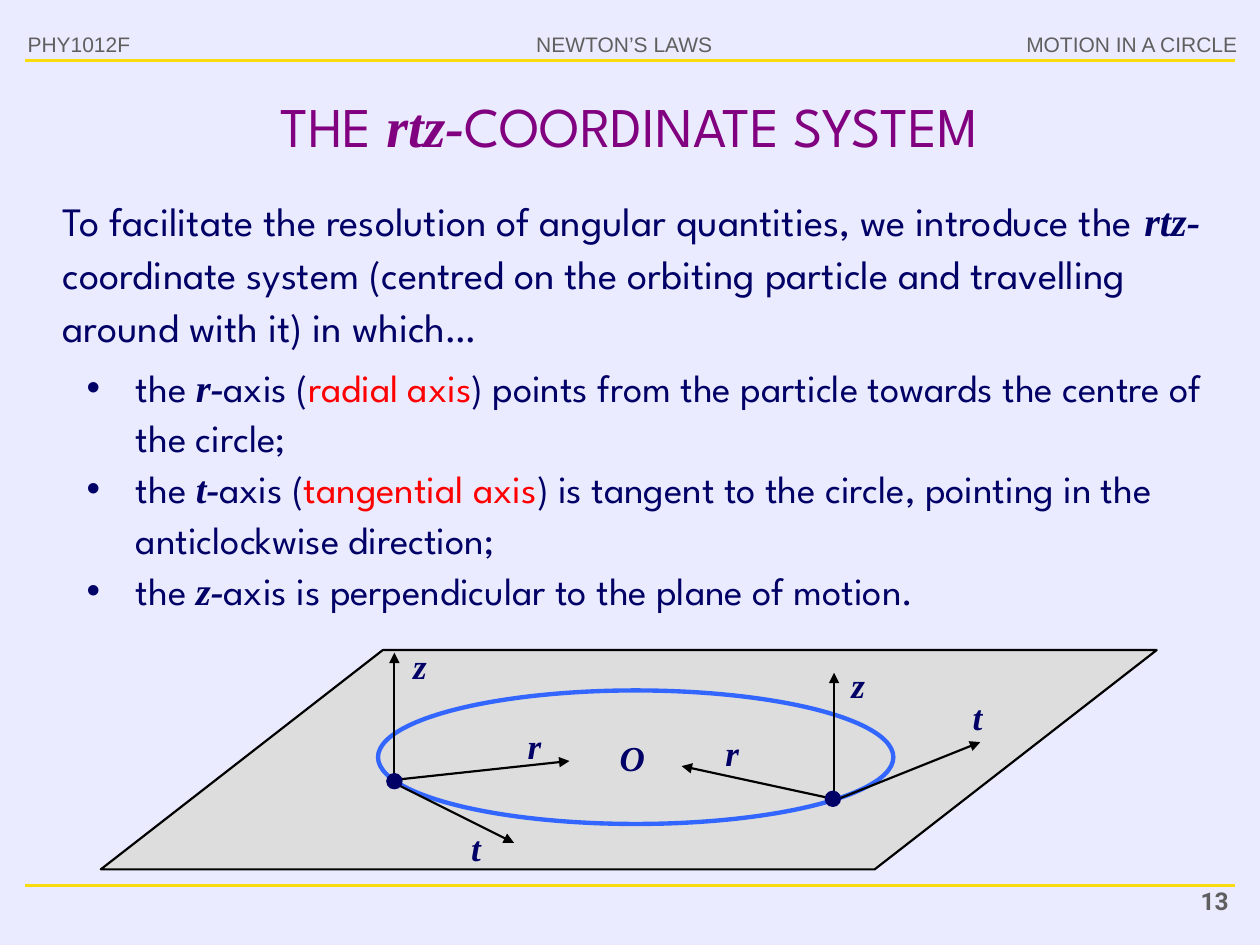
from dataclasses import dataclass
from typing import NamedTuple

from lxml import etree
from pptx import Presentation
from pptx import util as u
from pptx.dml.color import RGBColor
from pptx.enum import shapes, text
from pptx.oxml.ns import qn

COLORS = {
    "background": "EBEBFF", "rule": "F8DC0E", "header": "5F5F5F",
    "title": "800080", "body": "000066", "accent": "FF0000",
    "plane": "DDDDDD", "orbit": "3366FF", "ink": "000000",
}
HEADER_FONT, BODY_FONT, SYMBOL_FONT = "Arial", "League Spartan", "Times New Roman"
LEFT, CENTER, RIGHT = text.PP_ALIGN.LEFT, text.PP_ALIGN.CENTER, text.PP_ALIGN.RIGHT

# Grid of 100 columns by 75 rows
presentation = Presentation()
presentation.slide_width, presentation.slide_height = u.Inches(10), u.Inches(7.5)
COLUMN = presentation.slide_width / 100
ROW = presentation.slide_height / 75


class Box(NamedTuple):
    column: float
    row: float
    columns: float
    rows: float

    def lengths(self) -> tuple:
        return (u.Emu(round(self.column * COLUMN)), u.Emu(round(self.row * ROW)),
                u.Emu(round(self.columns * COLUMN)), u.Emu(round(self.rows * ROW)))


class Point(NamedTuple):
    column: float
    row: float


class Piece(NamedTuple):
    words: str
    kind: str = "plain"  # plain, symbol or accent


@dataclass
class Style:
    size: float
    color: str
    font: str = BODY_FONT
    bold: bool = False
    align: text.PP_ALIGN = LEFT
    spacing: float = 1.0
    margin: float = 0
    hanging: float = 0
    bullet: str = ""
    anchor: text.MSO_ANCHOR = text.MSO_ANCHOR.TOP
    wrap: bool = True


@dataclass
class Axis:
    name: str
    start: Point
    end: Point
    label: Box


@dataclass
class Particle:
    center: Point
    axes: list[Axis]


def rgb(name: str) -> RGBColor:
    return RGBColor.from_string(COLORS[name])


def format_paragraph(paragraph, style: Style) -> None:
    properties = paragraph._p.get_or_add_pPr()
    properties.set("marL", str(round(style.margin * COLUMN)))
    properties.set("indent", str(round(-style.hanging * COLUMN)))
    if style.bullet:
        etree.SubElement(properties, qn("a:buFont"), typeface=HEADER_FONT)
        etree.SubElement(properties, qn("a:buChar"), char=style.bullet)
    paragraph.alignment = style.align
    paragraph.line_spacing = style.spacing


def add_text(slide, box: Box, paragraphs: list[list[Piece]], style: Style) -> None:
    frame = slide.shapes.add_textbox(*box.lengths()).text_frame
    frame.word_wrap = style.wrap
    frame.vertical_anchor = style.anchor
    for index, pieces in enumerate(paragraphs):
        paragraph = frame.add_paragraph() if index else frame.paragraphs[0]
        format_paragraph(paragraph, style)
        for piece in pieces:
            run = paragraph.add_run()
            run.text = piece.words
            symbol = piece.kind == "symbol"
            run.font.name = SYMBOL_FONT if symbol else style.font
            run.font.size = u.Pt(style.size)
            run.font.bold = symbol or style.bold
            run.font.italic = symbol
            run.font.color.rgb = rgb("accent" if piece.kind == "accent" else style.color)


def add_figure(slide, preset, box: Box, line: str, width: float, fill: str = ""):
    shape = slide.shapes.add_shape(preset, *box.lengths())
    shape.shadow.inherit = False
    if fill:
        shape.fill.solid()
        shape.fill.fore_color.rgb = rgb(fill)
    else:
        shape.fill.background()
    shape.line.color.rgb = rgb(line)
    shape.line.width = u.Pt(width)
    return shape


def add_line(slide, start: Point, end: Point, color: str, width: float,
             arrow: bool = False) -> None:
    ends = [round(value) for point in (start, end)
            for value in (point.column * COLUMN, point.row * ROW)]
    connector = slide.shapes.add_connector(shapes.MSO_CONNECTOR.STRAIGHT, *ends)
    connector.line.color.rgb = rgb(color)
    connector.line.width = u.Pt(width)
    if arrow:
        etree.SubElement(connector.line._get_or_add_ln(), qn("a:tailEnd"), type="triangle")
    etree.SubElement(connector._element.spPr, qn("a:effectLst"))


def add_particle(slide, particle: Particle) -> None:
    for axis in particle.axes:
        add_line(slide, axis.start, axis.end, "ink", 1.25, arrow=True)
        add_text(slide, axis.label, [[Piece(axis.name, "symbol")]], LABEL)
    center, size = particle.center, 1.2
    dot = Box(center.column - size / 2, center.row - size / 2, size, size)
    add_figure(slide, shapes.MSO_SHAPE.OVAL, dot, "body", 0.75, "body")


HEADER = Style(12, "header", HEADER_FONT)
HEADER_CENTER = Style(12, "header", HEADER_FONT, align=CENTER, wrap=False)
HEADER_RIGHT = Style(12, "header", HEADER_FONT, align=RIGHT, wrap=False)
PAGE = Style(14, "header", "Roboto", bold=True, align=RIGHT)
TITLE = Style(32, "title", align=CENTER, anchor=text.MSO_ANCHOR.MIDDLE)
INTRO = Style(23, "body", spacing=1.1, margin=2)
BULLETS = Style(22, "body", spacing=1.1, margin=7.8, hanging=3.9, bullet="•")
LABEL = Style(20, "body", spacing=1.1, margin=2)

slide = presentation.slides.add_slide(presentation.slide_layouts[6])
slide.background.fill.solid()
slide.background.fill.fore_color.rgb = rgb("background")

# Rules, running header and page number
for row in (4.8, 70.3):
    add_line(slide, Point(2, row), Point(98, row), "rule", 1.75)
for words, box, style in (
    ("PHY1012F", Box(1.2, 2, 11.8, 3.2), HEADER),
    ("NEWTON’S LAWS", Box(41.5, 2, 16.1, 3), HEADER_CENTER),
    ("MOTION IN A CIRCLE", Box(80.2, 2, 19, 3), HEADER_RIGHT),
    ("13", Box(88.2, 69.8, 10.3, 3.7), PAGE),
):
    add_text(slide, box, [[Piece(words)]], style)

# Title and introduction
add_text(slide, Box(5, 6.3, 90, 7.2), [
    [Piece("THE "), Piece("rtz-", "symbol"), Piece("COORDINATE SYSTEM")]], TITLE)
add_text(slide, Box(2, 14.7, 96, 13.7), [[
    Piece("To facilitate the resolution of angular quantities, we introduce the "),
    Piece("rtz-", "symbol"),
    Piece("coordinate system (centred on the orbiting particle and travelling "
          "around with it) in which…")]], INTRO)

# Axis definitions
add_text(slide, Box(2, 28, 94.8, 21.1), [
    [Piece("the "), Piece("r-", "symbol"), Piece("axis ("), Piece("radial axis", "accent"),
     Piece(") points from the particle towards the centre of the circle;")],
    [Piece("the "), Piece("t-", "symbol"), Piece("axis ("), Piece("tangential axis", "accent"),
     Piece(") is tangent to the circle, pointing in the anticlockwise direction;")],
    [Piece("the "), Piece("z-", "symbol"),
     Piece("axis is perpendicular to the plane of motion.")],
], BULLETS)

# Plane of motion with the orbit and its centre
plane = add_figure(slide, shapes.MSO_SHAPE.PARALLELOGRAM, Box(8, 51.6, 83.8, 17.4),
                   "ink", 1.25, "plane")
plane.adjustments[0] = 1.286
add_figure(slide, shapes.MSO_SHAPE.OVAL, Box(30, 54.8, 40.9, 10.6), "orbit", 2.5)
add_text(slide, Box(46.2, 57.6, 6.6, 4.7), [[Piece("O", "symbol")]], LABEL)

# Orbiting particle at two moments, each with its own axes
for particle in (
    Particle(Point(66.1, 63.4), [
        Axis("r", Point(66.1, 63.4), Point(54.1, 60.8), Box(54.6, 57.2, 6.6, 4.7)),
        Axis("t", Point(66.3, 63.5), Point(77.8, 58.9), Box(74.2, 54.4, 5.9, 4.7)),
        Axis("z", Point(66.2, 63.4), Point(66.2, 53.4), Box(64.6, 51.8, 7.3, 4.7)),
    ]),
    Particle(Point(31.3, 62), [
        Axis("r", Point(31.3, 61.9), Point(45.2, 60.4), Box(38.9, 56.7, 6.6, 4.7)),
        Axis("t", Point(31.2, 62.1), Point(40.8, 66.9), Box(34.4, 64.8, 5.9, 4.7)),
        Axis("z", Point(31.3, 61.9), Point(31.3, 51.8), Box(29.8, 50.3, 7.3, 4.7)),
    ]),
):
    add_particle(slide, particle)

presentation.save("out.pptx")
